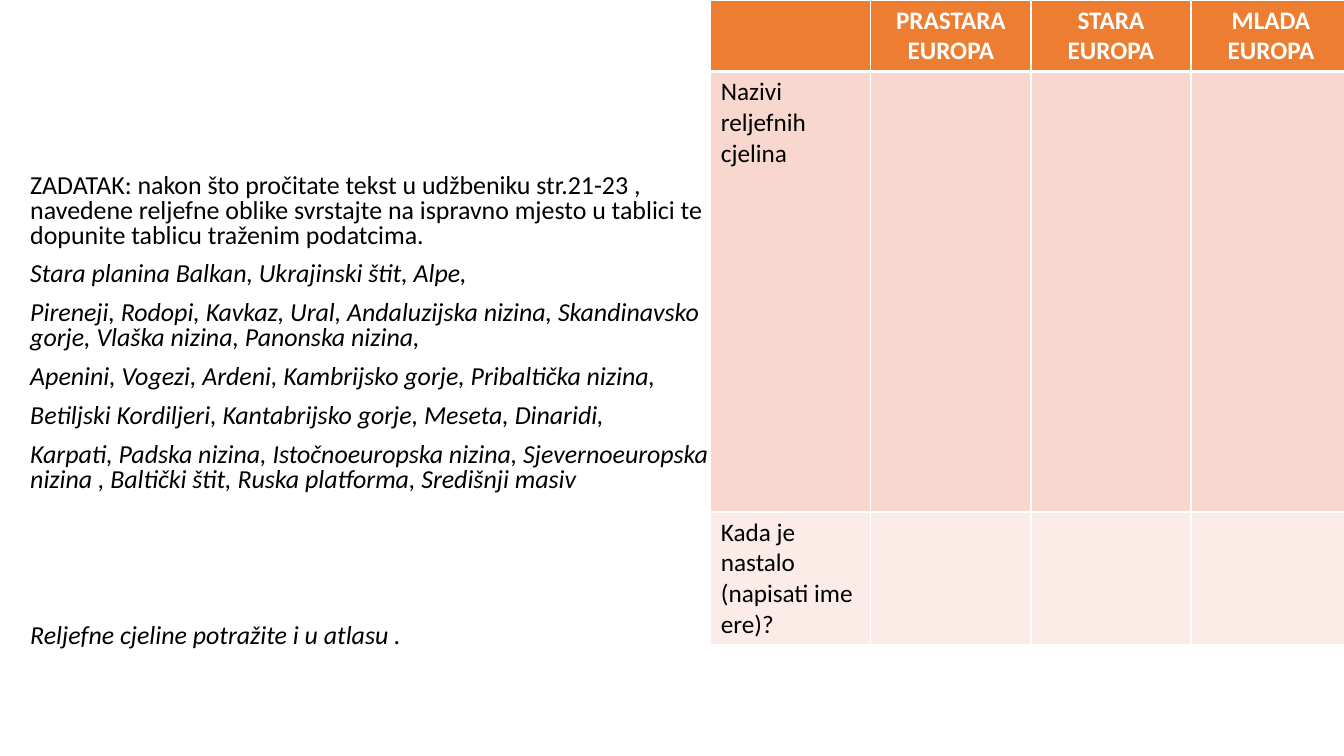
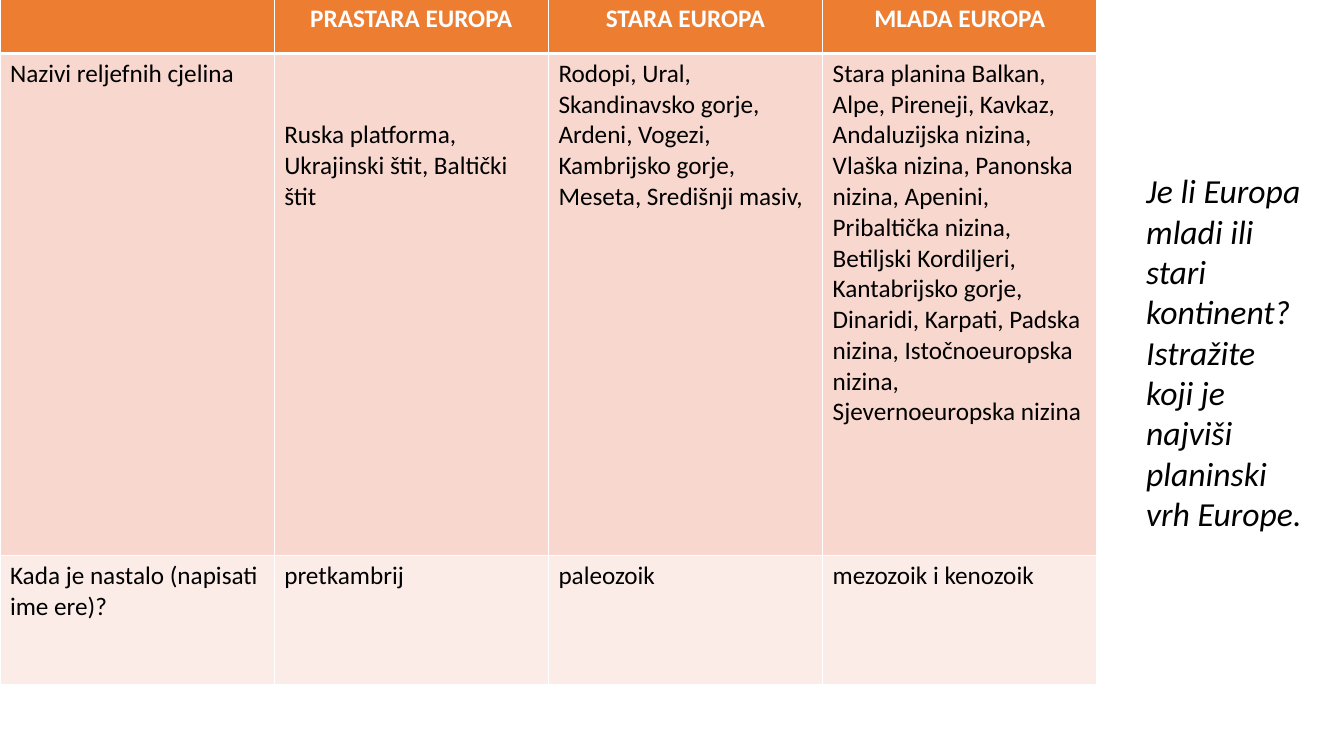
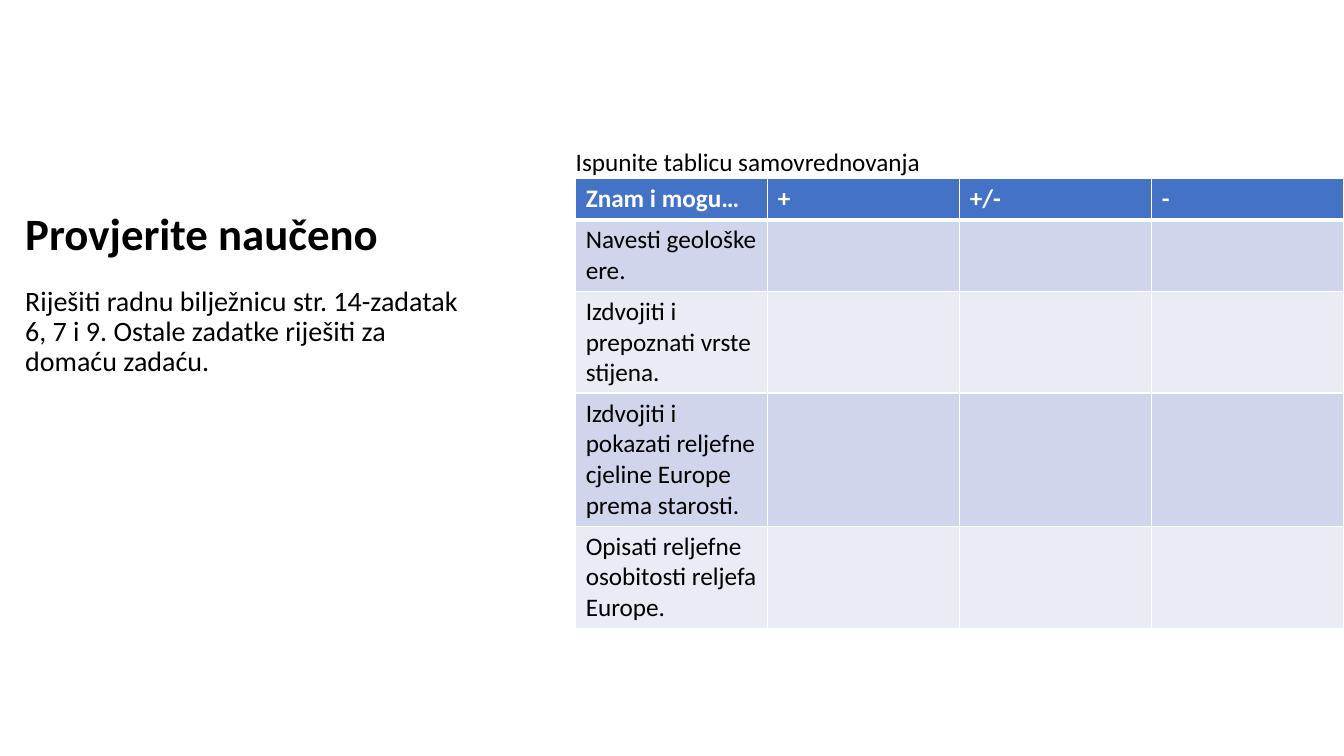
from dataclasses import dataclass

from lxml import etree
from pptx import Presentation
from pptx.dml.color import RGBColor
from pptx.enum.text import PP_ALIGN
from pptx.oxml.ns import qn
from pptx.util import Inches, Pt

FONT = "Calibri"
BLACK = "000000"
WHITE = "FFFFFF"
CENTER = PP_ALIGN.CENTER
LEFT = PP_ALIGN.LEFT
BLANK_LAYOUT = 6
COLUMN_COUNT = 4
CELL_MARGIN = 0.05


@dataclass(frozen=True)
class TableStyle:
    header: str
    bands: tuple[str, str]
    header_alignment: PP_ALIGN


@dataclass(frozen=True)
class Line:
    text: str
    size: float
    bold: bool = False
    italic: bool = False
    space_before: float = 0


@dataclass(frozen=True)
class TextBlock:
    left: float
    top: float
    width: float
    height: float
    lines: list[Line]
    line_spacing: float = 1.0
    insets: tuple[float, float] = (0, 0)


@dataclass(frozen=True)
class Grid:
    left: float
    top: float
    width: float
    row_heights: list[float]
    rows: list[list[str]]
    style: TableStyle


RELIEF_STYLE = TableStyle("ED7D31", ("F8D7CE", "FCECE8"), CENTER)
CHECKLIST_STYLE = TableStyle("4472C4", ("CFD5EA", "E9EBF5"), LEFT)
RELIEF_HEADER = ["", "PRASTARA EUROPA", "STARA EUROPA", "MLADA EUROPA"]
UNITS_LABEL = "Nazivi reljefnih cjelina"
ERA_LABEL = "Kada je nastalo (napisati ime ere)?"


def color(value: str) -> RGBColor:
    return RGBColor.from_string(value)


def format_runs(paragraph, formats: dict, font_color: str) -> None:
    for run in paragraph.runs:
        for name, value in formats.items():
            setattr(run.font, name, value)
        run.font.color.rgb = color(font_color)


def add_text(slide, block: TextBlock) -> None:
    shape = slide.shapes.add_textbox(
        Inches(block.left), Inches(block.top), Inches(block.width), Inches(block.height)
    )
    frame = shape.text_frame
    horizontal, vertical = map(Inches, block.insets)
    frame_formats = {
        "word_wrap": True,
        "margin_left": horizontal,
        "margin_right": horizontal,
        "margin_top": vertical,
        "margin_bottom": vertical,
    }
    for name, value in frame_formats.items():
        setattr(frame, name, value)
    frame.text = "\n".join(line.text for line in block.lines)
    for paragraph, line in zip(frame.paragraphs, block.lines):
        paragraph.line_spacing = block.line_spacing
        paragraph.space_before = Pt(line.space_before)
        formats = {
            "name": FONT,
            "size": Pt(line.size),
            "bold": line.bold,
            "italic": line.italic,
        }
        format_runs(paragraph, formats, BLACK)


def set_borders(cell, widths: dict[str, float]) -> None:
    """Put white borders, in points, before the fill of the cell."""
    properties = cell._tc.get_or_add_tcPr()
    for index, (side, width) in enumerate(widths.items()):
        border = etree.Element(qn(f"a:{side}"), w=str(Pt(width)))
        fill = etree.SubElement(border, qn("a:solidFill"))
        etree.SubElement(fill, qn("a:srgbClr"), val=WHITE)
        properties.insert(index, border)


def add_grid(slide, grid: Grid):
    table = slide.shapes.add_table(
        len(grid.rows),
        COLUMN_COUNT,
        Inches(grid.left),
        Inches(grid.top),
        Inches(grid.width),
        Inches(sum(grid.row_heights)),
    ).table
    for column in table.columns:
        column.width = Inches(grid.width / COLUMN_COUNT)
    for row_index, (texts, height) in enumerate(zip(grid.rows, grid.row_heights)):
        table.rows[row_index].height = Inches(height)
        is_header = row_index == 0
        fill = grid.style.header if is_header else grid.style.bands[(row_index - 1) % 2]
        borders = {
            "lnL": 1,
            "lnR": 1,
            "lnT": 3 if row_index == 1 else 1,
            "lnB": 3 if is_header else 1,
        }
        for cell, text in zip(table.rows[row_index].cells, texts):
            cell.margin_top = cell.margin_bottom = Inches(CELL_MARGIN)
            cell.fill.solid()
            cell.fill.fore_color.rgb = color(fill)
            set_borders(cell, borders)
            cell.text = text
            formats = {"name": FONT, "size": Pt(18), "bold": is_header}
            for paragraph in cell.text_frame.paragraphs:
                paragraph.alignment = grid.style.header_alignment if is_header else LEFT
                format_runs(paragraph, formats, WHITE if is_header else BLACK)
    return table


def build_task_slide(slide) -> None:
    task = (
        "ZADATAK: nakon što pročitate tekst u udžbeniku str.21-23 , navedene reljefne "
        "oblike svrstajte na ispravno mjesto u tablici te dopunite tablicu traženim podatcima."
    )
    relief_forms = [
        "Stara planina Balkan, Ukrajinski štit, Alpe,",
        "Pireneji, Rodopi, Kavkaz, Ural, Andaluzijska nizina, Skandinavsko gorje, "
        "Vlaška nizina, Panonska nizina,",
        "Apenini, Vogezi, Ardeni, Kambrijsko gorje, Pribaltička nizina,",
        "Betiljski Kordiljeri, Kantabrijsko gorje, Meseta, Dinaridi,",
        "Karpati, Padska nizina, Istočnoeuropska nizina, Sjevernoeuropska nizina , "
        "Baltički štit, Ruska platforma, Središnji masiv",
    ]
    lines = [
        Line(task, 18.5),
        *(Line(text, 18.5, italic=True, space_before=10) for text in relief_forms),
        Line("Reljefne cjeline potražite i u atlasu .", 18.5, italic=True, space_before=94),
    ]
    add_text(slide, TextBlock(0.3, 1.73, 6.75, 5.28, lines, line_spacing=0.8))
    rows = [RELIEF_HEADER, [UNITS_LABEL, "", "", ""], [ERA_LABEL, "", "", ""]]
    add_grid(slide, Grid(7.05, 0, 6.35, [0.71, 4.37, 1.32], rows, RELIEF_STYLE))


def build_solution_slide(slide) -> None:
    units = [
        UNITS_LABEL,
        "Ruska platforma, Ukrajinski štit, Baltički štit",
        "Rodopi, Ural,\nSkandinavsko gorje, Ardeni, Vogezi, Kambrijsko gorje, Meseta, "
        "Središnji masiv,",
        "Stara planina Balkan, Alpe, Pireneji, Kavkaz, Andaluzijska nizina, Vlaška nizina, "
        "Panonska nizina, Apenini, Pribaltička nizina,\nBetiljski Kordiljeri, Kantabrijsko "
        "gorje, Dinaridi, Karpati, Padska nizina, Istočnoeuropska nizina, "
        "Sjevernoeuropska nizina",
    ]
    eras = [ERA_LABEL, "pretkambrij", "paleozoik", "mezozoik i kenozoik"]
    rows = [RELIEF_HEADER, units, eras]
    table = add_grid(slide, Grid(0, -0.02, 10.88, [0.55, 4.98, 1.28], rows, RELIEF_STYLE))
    table.cell(1, 1).margin_top = Inches(0.66)
    questions = [
        Line("Je li Europa mladi ili stari kontinent?", 24, italic=True),
        Line("Istražite koji je najviši planinski vrh Europe.", 24, italic=True),
    ]
    add_text(slide, TextBlock(11.27, 1.64, 1.8, 3.74, questions, insets=(0.1, 0.05)))


def build_review_slide(slide) -> None:
    homework = (
        "Riješiti radnu bilježnicu str. 14-zadatak 6, 7 i 9. "
        "Ostale zadatke riješiti za domaću zadaću."
    )
    blocks = [
        TextBlock(0.25, 2.1, 4.3, 0.6, [Line("Provjerite naučeno", 32, bold=True)], 0.9),
        TextBlock(0.25, 2.85, 4.3, 2.24, [Line(homework, 20)], 0.9),
        TextBlock(5.71, 1.49, 6.88, 0.28, [Line("Ispunite tablicu samovrednovanja", 18)], 0.9),
    ]
    for block in blocks:
        add_text(slide, block)
    skills = [
        "Navesti geološke ere.",
        "Izdvojiti i prepoznati vrste stijena.",
        "Izdvojiti i pokazati reljefne cjeline Europe prema starosti.",
        "Opisati reljefne osobitosti reljefa Europe.",
    ]
    rows = [["Znam i mogu…", "+", "+/-", "-"], *([skill, "", "", ""] for skill in skills)]
    heights = [0.41, 0.71, 1.01, 1.32, 1.02]
    add_grid(slide, Grid(5.71, 1.77, 7.62, heights, rows, CHECKLIST_STYLE))


def main() -> None:
    presentation = Presentation()
    presentation.slide_width = Inches(13.33)
    presentation.slide_height = Inches(7.5)
    for build in (build_task_slide, build_solution_slide, build_review_slide):
        build(presentation.slides.add_slide(presentation.slide_layouts[BLANK_LAYOUT]))
    presentation.save("out.pptx")


if __name__ == "__main__":
    main()
